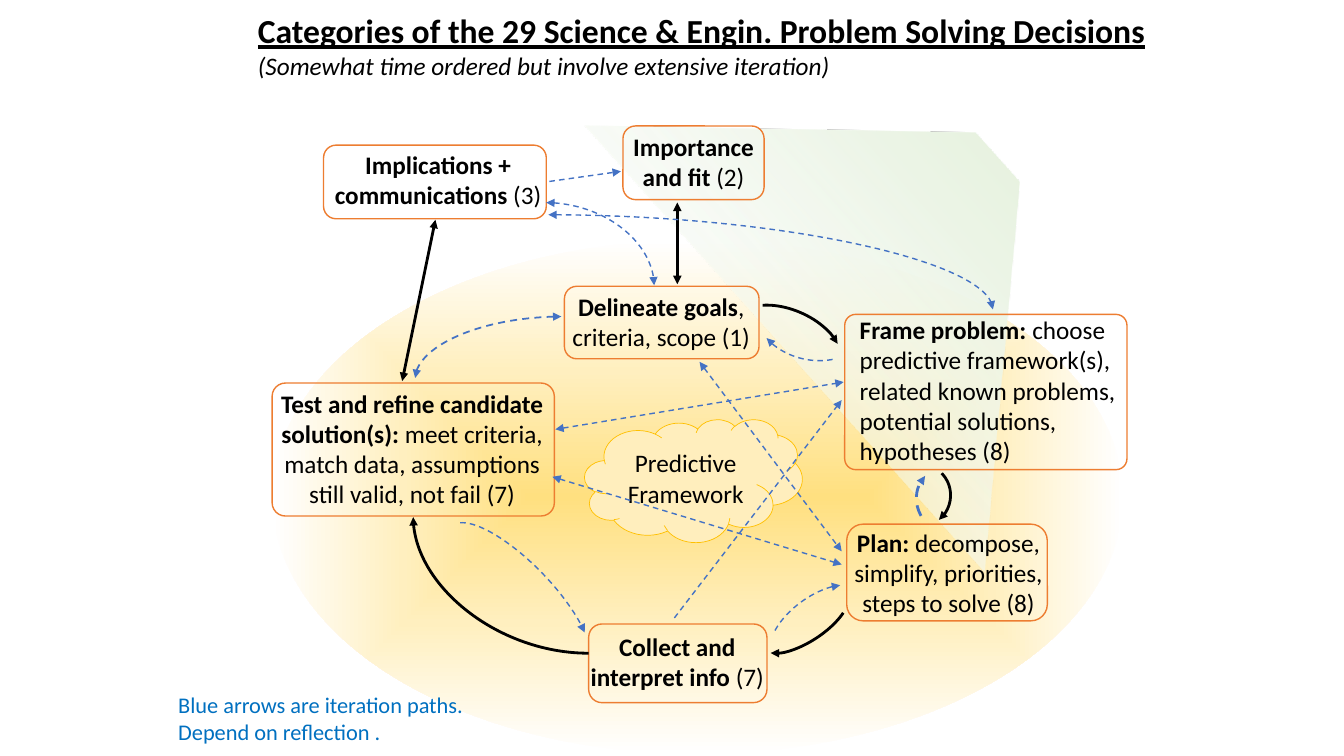
from dataclasses import dataclass

from lxml.etree import SubElement
from pptx import Presentation
from pptx.dml.color import RGBColor
from pptx.enum.dml import MSO_LINE
from pptx.enum.shapes import MSO_CONNECTOR as Connector, MSO_SHAPE as Shape
from pptx.enum.text import MSO_ANCHOR as Anchor, MSO_AUTO_SIZE as AutoSize, PP_ALIGN as Align
from pptx.oxml.ns import qn
from pptx.util import Pt


@dataclass(frozen=True)
class Theme:
    font: str = "Calibri"
    text: str = "000000"
    legend: str = "0070C0"
    flow: str = "000000"
    iteration: str = "4472C4"
    card_line: str = "ED7D31"
    cloud_fill: str = "FFEEBD"
    cloud_line: str = "FFC000"
    glow: tuple = ((0, "FFE080"), (49, "FFEFBF"), (100, "FFFFFF"))
    beam: tuple = ((0, "D7E9CA"), (41, "EBF4E5"), (100, "FFFFFF", 0))
    title_size: int = 24
    body_size: int = 18
    legend_size: int = 16


def write_text(frame, paragraphs, size, color, font, align=Align.LEFT):
    """Each paragraph is a list of (text, font attributes) spans."""
    frame.word_wrap = True
    for index, spans in enumerate(paragraphs):
        para = frame.paragraphs[0] if index == 0 else frame.add_paragraph()
        para.alignment = align
        for text, attributes in spans:
            span = para.add_run()
            span.text = text
            span.font.name = font
            span.font.size = Pt(size)
            span.font.color.rgb = RGBColor.from_string(color)
            for name, value in attributes.items():
                setattr(span.font, name, value)


class Diagram:
    def __init__(self, page, theme):
        self.page = page
        self.theme = theme

    def shape(self, kind, frame, adjustments=(), rotation=0, fill=None, line=None, width=1):
        item = self.page.shapes.add_shape(kind, *map(Pt, frame))
        item.shadow.inherit = False
        item.rotation = rotation
        for index, value in enumerate(adjustments):
            item.adjustments[index] = value
        if fill:
            item.fill.solid()
            item.fill.fore_color.rgb = RGBColor.from_string(fill)
        else:
            item.fill.background()
        if line:
            self.stroke(item, line, width)
        else:
            item.line.fill.background()
        return item

    def gradient(self, kind, frame, stops, angle=None, **shape_format):
        """Without an angle the colours spread from the centre."""
        item = self.shape(kind, frame, **shape_format)
        item.fill.gradient()
        grad = item.element.spPr.find(qn("a:gradFill"))
        for child in list(grad):
            grad.remove(child)
        stop_list = SubElement(grad, qn("a:gsLst"))
        for position, color, *alpha in stops:
            stop = SubElement(stop_list, qn("a:gs"), pos=str(position * 1000))
            tint = SubElement(stop, qn("a:srgbClr"), val=color)
            if alpha:
                SubElement(tint, qn("a:alpha"), val=str(alpha[0] * 1000))
        if angle is None:
            spread = SubElement(grad, qn("a:path"), path="shape")
            SubElement(spread, qn("a:fillToRect"), l="50000", t="50000", r="50000", b="50000")
        else:
            SubElement(grad, qn("a:lin"), ang=str(angle * 60000), scaled="0")

    def stroke(self, item, color, width, dashed=False, ends=()):
        item.line.color.rgb = RGBColor.from_string(color)
        item.line.width = Pt(width)
        if dashed:
            item.line.dash_style = MSO_LINE.DASH
        outline = item.element.spPr.find(qn("a:ln"))
        for end in ends:
            SubElement(outline, qn(f"a:{end}"), type="triangle")

    def path_style(self, item, iteration, width, both=False):
        color = self.theme.iteration if iteration else self.theme.flow
        ends = ("headEnd", "tailEnd") if both else ("tailEnd",)
        self.stroke(item, color, width or (1 if iteration else 2), iteration, ends)

    def arrow(self, start, end, iteration=True, both=True, curved=False, width=None):
        """A curved arrow leaves horizontally and arrives vertically."""
        kind = Connector.CURVE if curved else Connector.STRAIGHT
        link = self.page.shapes.add_connector(kind, *map(Pt, start + end))
        if curved:
            link.element.spPr.find(qn("a:prstGeom")).set("prst", "curvedConnector2")
        self.path_style(link, iteration, width, both)
        SubElement(link.element.spPr, qn("a:effectLst"))

    def arc(self, frame, rotation, sweep, iteration=True, width=None):
        item = self.shape(Shape.ARC, frame, sweep, rotation)
        self.path_style(item, iteration, width)

    def text(self, frame, paragraphs, size=None, color=None, align=Align.LEFT):
        box = self.page.shapes.add_textbox(*map(Pt, frame))
        write_text(box.text_frame, paragraphs, size or self.theme.body_size,
                   color or self.theme.text, self.theme.font, align)
        box.text_frame.auto_size = AutoSize.SHAPE_TO_FIT_TEXT

    def card(self, frame, text_frame, heading, detail, corner=0.17, align=Align.CENTER):
        self.shape(Shape.ROUNDED_RECTANGLE, frame, (corner,), line=self.theme.card_line)
        self.text(text_frame, [[(heading, {"bold": True}), (detail, {})]], align=align)

    def cloud(self, frame, label):
        theme = self.theme
        item = self.shape(Shape.CLOUD, frame, fill=theme.cloud_fill,
                          line=theme.cloud_line, width=0.5)
        item.text_frame.vertical_anchor = Anchor.MIDDLE
        write_text(item.text_frame, [[(label, {})]], theme.body_size, theme.text,
                   theme.font, Align.CENTER)


CARDS = [
    ((603.4, 224.6, 201.6, 110.9), (607, 221, 203, 116.6), "Frame problem: ",
     "choose predictive framework(s), related known problems, potential solutions, hypotheses (8)",
     0.07, Align.LEFT),
    ((194.4, 273.6, 201.6, 95), (188.6, 273.6, 211.7, 94.3),
     "Test and refine candidate solution(s): ",
     "meet criteria, match data, assumptions still valid, not fail (7)", 0.1),
    ((403.2, 204.5, 139, 51.8), (398.9, 204.5, 146.9, 51.1),
     "Delineate goals", ", criteria, scope (1)"),
    ((420.5, 445.7, 127.4, 56.2), (411.1, 447.1, 145.4, 51.1),
     "Collect and interpret info ", "(7)"),
    ((231.1, 103.7, 159.1, 52.6), (229, 103, 167.8, 51.1),
     "Implications + communications ", "(3)"),
    ((445, 90, 100.8, 52.6), (441.4, 90, 108, 51.1), "Importance and fit ", "(2)"),
    ((604.8, 374.4, 143.3, 69.1), (591.8, 373, 171.4, 72.7),
     "Plan: ", "decompose, simplify, priorities, steps to solve (8)"),
]

ARROWS = [
    ((483.8, 144.7), (483.8, 203), {"iteration": False}),
    ((287.3, 272.2), (311, 157), {"iteration": False}),
    ((392.4, 129.6), (443.5, 122.4), {"both": False}),
    ((396.7, 306.7), (602.6, 272.9), {}),
    ((394.6, 340.6), (601.2, 403.2), {}),
    ((499.7, 258.5), (601.2, 393.8), {}),
    ((481.7, 441.4), (601.2, 285.8), {"both": False}),
    ((420.5, 466.6), (295.2, 369.4), {"iteration": False, "both": False, "curved": True}),
    ((401, 226.1), (296.6, 270), {"curved": True, "width": 1.25}),
    ((390.2, 144.7), (467.3, 203.8), {"curved": True}),
    ((391.7, 153.4), (709.2, 221), {"curved": True}),
]

ARCS = [
    ((550.8, 187.9, 58.3, 79.9), 102.7, (192.12, 32.7), {}),
    ((563.8, 406.8, 40.3, 79.2), 233.6, (179.37, 39.64), {}),
    ((347.8, 356.4, 46.1, 138.2), 315.9, (165.09, 44.03), {}),
    ((654.5, 329.8, 59.8, 53.3), 183.5, (199.38, 18.91), {"width": 2}),
    ((560.2, 407.5, 29.5, 72), 56.8, (174.82, 48.01), {"iteration": False}),
    ((536.4, 204.5, 50.4, 83.5), 292.9, (183.83, 39.6), {"iteration": False}),
    ((637.2, 331.9, 41.8, 43.9), 3.2, (185.66, 30.59), {"iteration": False}),
]


def main():
    deck = Presentation()
    deck.slide_width, deck.slide_height = Pt(960), Pt(540)
    theme = Theme()
    diagram = Diagram(deck.slides.add_slide(deck.slide_layouts[6]), theme)

    diagram.gradient(Shape.OVAL, (194.4, 171.4, 607.7, 367.2), theme.glow)
    diagram.gradient(Shape.TRAPEZOID, (422.6, 78.5, 427.7, 204.5), theme.beam, angle=90,
                     adjustments=(0.93,), rotation=48.1)
    diagram.cloud((417.6, 299.5, 155.5, 87.8), "Predictive Framework")
    for card in CARDS:
        diagram.card(*card)
    for start, end, style in ARROWS:
        diagram.arrow(start, end, **style)
    for frame, rotation, sweep, style in ARCS:
        diagram.arc(frame, rotation, sweep, **style)

    title = ("Categories of the 29 Science & Engin. Problem Solving Decisions",
             {"bold": True, "underline": True, "size": Pt(theme.title_size)})
    subtitle = ("(Somewhat time ordered but involve extensive iteration)", {"italic": True})
    diagram.text((177.1, 3.6, 707, 58.3), [[title], [subtitle]])
    legend = ("Blue arrows are iteration paths.", "Depend on reflection .")
    diagram.text((120.2, 490.3, 274.3, 46.1), [[(line, {})] for line in legend],
                 theme.legend_size, theme.legend)
    deck.save("out.pptx")


if __name__ == "__main__":
    main()
